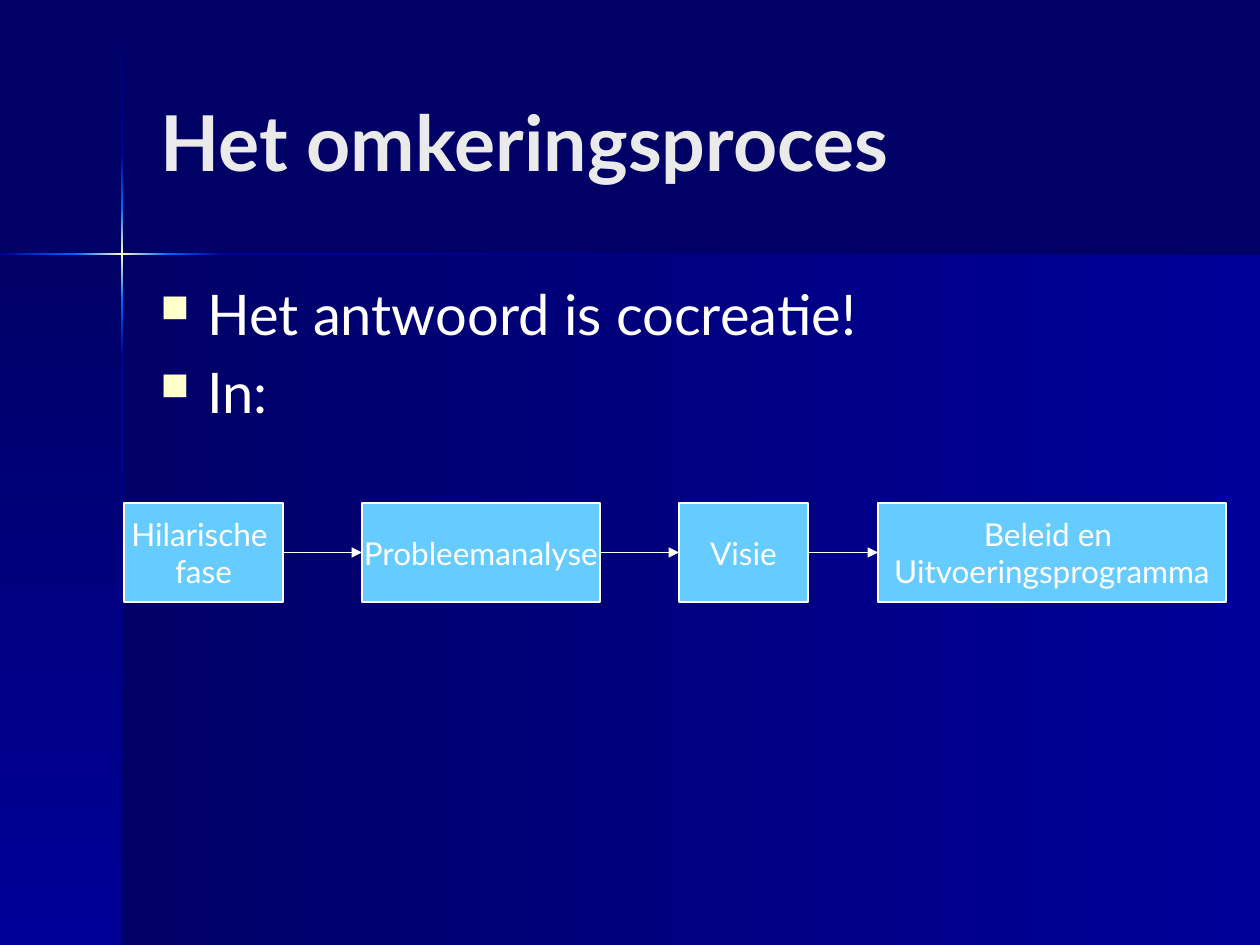
from dataclasses import dataclass
from itertools import pairwise

from lxml.etree import SubElement
from pptx import Presentation
from pptx.dml.color import RGBColor
from pptx.enum.shapes import MSO_CONNECTOR, MSO_SHAPE
from pptx.enum.text import MSO_ANCHOR, PP_ALIGN
from pptx.oxml.ns import qn
from pptx.util import Pt

PX = 914400 / 126
FONT = "Lato"
COLORS = {
    "dark": "000066",
    "deep": "000099",
    "glow": "0066FF",
    "cream": "FFFFCC",
    "title": "EAEAEA",
    "white": "FFFFFF",
    "step": "66CCFF",
}
DOWN, ACROSS = 90, 0
BOX_TOP, BOX_HEIGHT = 503, 99


@dataclass
class Band:
    left: int
    top: int
    width: int
    height: int
    stops: tuple[str, ...]
    angle: int


@dataclass
class Step:
    left: int
    width: int
    lines: tuple[str, ...]


def px(length: int) -> int:
    return round(length * PX)


def rgb(name: str) -> RGBColor:
    return RGBColor.from_string(COLORS[name])


def style_font(paragraph, size: int, color: str, bold: bool = False) -> None:
    font = paragraph.font
    font.name, font.size, font.bold = FONT, Pt(size), bold
    font.color.rgb = rgb(color)


def add_rectangle(slide, left: int, top: int, width: int, height: int):
    rectangle = slide.shapes.add_shape(
        MSO_SHAPE.RECTANGLE, px(left), px(top), px(width), px(height))
    rectangle.shadow.inherit = False
    return rectangle


def add_band(slide, band: Band) -> None:
    shape = add_rectangle(slide, band.left, band.top, band.width, band.height)
    shape.line.fill.background()
    shape.fill.gradient()
    gradient = shape.fill._xPr.find(qn("a:gradFill"))
    stop_list = gradient.find(qn("a:gsLst"))
    for old_stop in list(stop_list):
        stop_list.remove(old_stop)
    for index, color in enumerate(band.stops):
        position = 100000 * index // (len(band.stops) - 1)
        stop = SubElement(stop_list, qn("a:gs"), pos=str(position))
        SubElement(stop, qn("a:srgbClr"), val=COLORS[color])
    gradient.find(qn("a:lin")).set("ang", str(band.angle * 60000))


def add_text(slide, left: int, top: int, width: int, height: int):
    frame = slide.shapes.add_textbox(
        px(left), px(top), px(width), px(height)).text_frame
    frame.word_wrap = True
    return frame


def add_bullet(paragraph) -> None:
    properties = paragraph._p.get_or_add_pPr()
    properties.set("marL", str(px(47)))
    properties.set("indent", str(-px(47)))
    color = SubElement(properties, qn("a:buClr"))
    SubElement(color, qn("a:srgbClr"), val=COLORS["cream"])
    SubElement(properties, qn("a:buSzPct"), val="70000")
    SubElement(properties, qn("a:buChar"), char="■")


def add_step(slide, step: Step):
    box = add_rectangle(slide, step.left, BOX_TOP, step.width, BOX_HEIGHT)
    box.fill.solid()
    box.fill.fore_color.rgb = rgb("step")
    box.line.color.rgb = rgb("white")
    box.line.width = Pt(0.75)
    frame = box.text_frame
    frame.word_wrap = False
    frame.vertical_anchor = MSO_ANCHOR.MIDDLE
    frame.text = "\n".join(step.lines)
    for paragraph in frame.paragraphs:
        paragraph.alignment = PP_ALIGN.CENTER
        style_font(paragraph, 18, "white")
    return box


def add_arrow(slide, source, target) -> None:
    arrow = slide.shapes.add_connector(MSO_CONNECTOR.STRAIGHT, 0, 0, 0, 0)
    arrow.begin_connect(source, 3)
    arrow.end_connect(target, 1)
    arrow.line.color.rgb = rgb("white")
    arrow.line.width = Pt(0.75)
    SubElement(arrow.line._get_or_add_ln(), qn("a:tailEnd"), type="triangle")
    SubElement(arrow._element.spPr, qn("a:effectLst"))


# Background panels, then the segments of the glowing cross
PANELS = [
    Band(122, 254, 1138, 691, ("dark", "deep"), ACROSS),
    Band(0, 254, 122, 691, ("dark", "deep"), DOWN),
]
RAYS = [
    ("dark", "deep"),
    ("deep", "glow"),
    ("glow", "cream", "glow"),
    ("glow", "deep"),
    ("deep", "dark"),
]
VERTICAL_EDGES = [1, 152, 208, 300, 355, 945]
HORIZONTAL_EDGES = [0, 76, 168, 223, 1260]

STEPS = [
    Step(124, 159, ("Hilarische ", "fase")),
    Step(362, 238, ("Probleemanalyse",)),
    Step(679, 129, ("Visie",)),
    Step(878, 348, ("Beleid en ", "Uitvoeringsprogramma")),
]


def main() -> None:
    presentation = Presentation()
    presentation.slide_width, presentation.slide_height = px(1260), px(945)
    slide = presentation.slides.add_slide(presentation.slide_layouts[6])
    slide.background.fill.solid()
    slide.background.fill.fore_color.rgb = rgb("dark")

    vertical = [Band(121, start, 2, end - start, stops, DOWN)
                for (start, end), stops in zip(pairwise(VERTICAL_EDGES), RAYS)]
    horizontal = [Band(start, 253, end - start, 2, stops, ACROSS)
                  for (start, end), stops in zip(pairwise(HORIZONTAL_EDGES), RAYS[1:])]
    for band in PANELS + vertical + horizontal:
        add_band(slide, band)

    # Title
    title = add_text(slide, 148, 42, 1040, 198)
    title.vertical_anchor = MSO_ANCHOR.MIDDLE
    title.text = "Het omkeringsproces"
    style_font(title.paragraphs[0], 44, "title", bold=True)

    # Bullets
    body = add_text(slide, 148, 273, 1040, 567)
    body.text = "Het antwoord is cocreatie!\nIn:"
    for paragraph in body.paragraphs:
        style_font(paragraph, 32, "white")
        paragraph.space_before = Pt(6.4)
        add_bullet(paragraph)

    # Process steps and the arrows between them
    boxes = [add_step(slide, step) for step in STEPS]
    for source, target in pairwise(boxes):
        add_arrow(slide, source, target)

    presentation.save("out.pptx")


if __name__ == "__main__":
    main()
